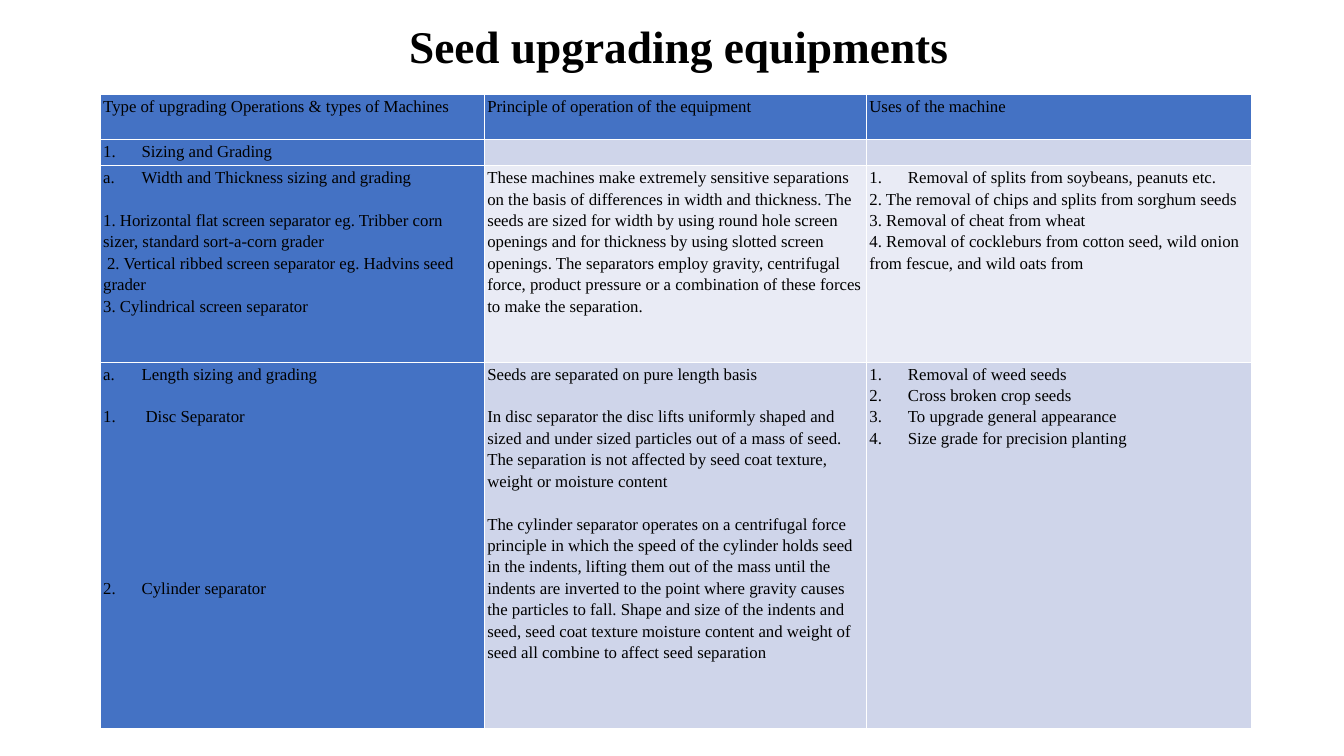
from lxml.etree import SubElement
from pptx import Presentation
from pptx.dml.color import RGBColor
from pptx.enum.text import MSO_ANCHOR, PP_ALIGN
from pptx.oxml.ns import qn
from pptx.util import Cm, Pt

FONT = "Times New Roman"
BLUE, PALE, LIGHT, WHITE, BLACK = "4472C4", "CFD5EA", "E9EBF5", "FFFFFF", "000000"
LINE = 15.3  # height of one text line in points
HANG = 0.97  # hanging indent of numbered items in cm

COLUMNS = [9.68, 9.63, 9.7]
ROWS = [1.14, 0.66, 4.95, 9.22]
BODY_FILLS = [PALE, LIGHT, PALE]


def color(value):
    return RGBColor.from_string(value)


def write(para, text, size=12, bold=False, spacing=1.15, align=PP_ALIGN.LEFT,
          before=0, number=None, hang=HANG, first=0):
    """Fill one paragraph; number is an automatic numbering scheme."""
    props = para._p.get_or_add_pPr()
    if number:
        props.set("marL", str(Cm(hang)))
        props.set("indent", str(-Cm(hang)))
        SubElement(props, qn("a:buFont"), typeface="+mj-lt")
        SubElement(props, qn("a:buAutoNum"), type=number)
    elif first:
        props.set("indent", str(Cm(first)))
    para.alignment = align
    para.line_spacing = spacing
    if before:
        para.space_before = Pt(before)
    span = para.add_run()
    span.text = text
    span.font.name = FONT
    span.font.size = Pt(size)
    span.font.bold = bold
    span.font.color.rgb = color(BLACK)


def item(text, **style):
    return text, style


def numbered(text, **style):
    return item(text, number="arabicPeriod", **style)


def lettered(text):
    return item(text, number="alphaLcPeriod")


CONTENT = [
    [[item("Type of upgrading Operations & types of Machines")],
     [item("Principle of operation of the equipment")],
     [item("Uses of the machine")]],
    [[numbered("Sizing and Grading")], [], []],
    [[lettered("Width and Thickness sizing and grading"),
      item("1. Horizontal flat screen separator eg. Tribber corn sizer, "
           "standard sort-a-corn grader", before=LINE),
      item("2. Vertical ribbed screen separator eg. Hadvins seed grader", first=0.1),
      item("3. Cylindrical screen separator")],
     [item("These machines make extremely sensitive separations on the basis of "
           "differences in width and thickness. The seeds are sized for width by "
           "using round hole screen openings and for thickness by using slotted "
           "screen openings. The separators employ gravity, centrifugal force, "
           "product pressure or a combination of these forces to make the "
           "separation.")],
     [numbered("Removal of splits from soybeans, peanuts etc."),
      item("2. The removal of chips and splits from sorghum seeds"),
      item("3. Removal of cheat from wheat"),
      item("4. Removal of cockleburs from cotton seed, wild onion from fescue, "
           "and wild oats from")]],
    [[lettered("Length sizing and grading"),
      numbered("Disc Separator", before=LINE, hang=HANG + 0.1),
      numbered("Cylinder separator", before=7 * LINE)],
     [item("Seeds are separated on pure length basis"),
      item("In disc separator the disc lifts uniformly shaped and sized and under "
           "sized particles out of a mass of seed. The separation is not affected "
           "by seed coat texture, weight or moisture content", before=LINE),
      item("The cylinder separator operates on a centrifugal force principle in "
           "which the speed of the cylinder holds seed in the indents, lifting them "
           "out of the mass until the indents are inverted to the point where "
           "gravity causes the particles to fall. Shape and size of the indents and "
           "seed, seed coat texture moisture content and weight of seed all combine "
           "to affect seed separation", before=LINE)],
     [numbered("Removal of weed seeds"),
      numbered("Cross broken crop seeds"),
      numbered("To upgrade general appearance"),
      numbered("Size grade for precision planting")]],
]


def format_cell(cell, fill):
    """Set margins, white borders and fill of one cell."""
    cell.margin_left = cell.margin_right = Cm(0.08)
    cell.margin_top = cell.margin_bottom = 0
    props = cell._tc.get_or_add_tcPr()
    for side in "LRTB":
        border = SubElement(props, qn(f"a:ln{side}"), w=str(Pt(1)))
        paint = SubElement(border, qn("a:solidFill"))
        SubElement(paint, qn("a:srgbClr"), val=WHITE)
    cell.fill.solid()
    cell.fill.fore_color.rgb = color(fill)


def fill_cell(cell, items):
    frame = cell.text_frame
    if not items:
        # A small end mark keeps the empty row low
        SubElement(frame.paragraphs[0]._p, qn("a:endParaRPr"), sz="1200")
    for index, (text, style) in enumerate(items):
        para = frame.add_paragraph() if index else frame.paragraphs[0]
        write(para, text, **style)


def add_title(page, left, top, width, height):
    box = page.shapes.add_textbox(Cm(left), Cm(top), Cm(width), Cm(height))
    frame = box.text_frame
    frame.word_wrap = True
    frame.vertical_anchor = MSO_ANCHOR.MIDDLE
    write(frame.paragraphs[0], "Seed upgrading equipments", size=32.4, bold=True,
          spacing=0.9, align=PP_ALIGN.CENTER)


def add_equipment_table(page, left, top):
    table = page.shapes.add_table(len(ROWS), len(COLUMNS), Cm(left), Cm(top),
                                  Cm(sum(COLUMNS)), Cm(sum(ROWS))).table
    for column, width in zip(table.columns, COLUMNS):
        column.width = Cm(width)
    for row, height in zip(table.rows, ROWS):
        row.height = Cm(height)
    for r, contents in enumerate(CONTENT):
        for c, items in enumerate(contents):
            cell = table.cell(r, c)
            blue = r == 0 or c == 0
            format_cell(cell, BLUE if blue else BODY_FILLS[r - 1])
            fill_cell(cell, items)


def main():
    deck = Presentation()
    deck.slide_width, deck.slide_height = Cm(33.87), Cm(19.05)
    page = deck.slides.add_slide(deck.slide_layouts[6])
    add_title(page, 2.5, 0.5, 29.21, 1.45)
    add_equipment_table(page, 2.52, 2.38)
    deck.save("out.pptx")


if __name__ == "__main__":
    main()
